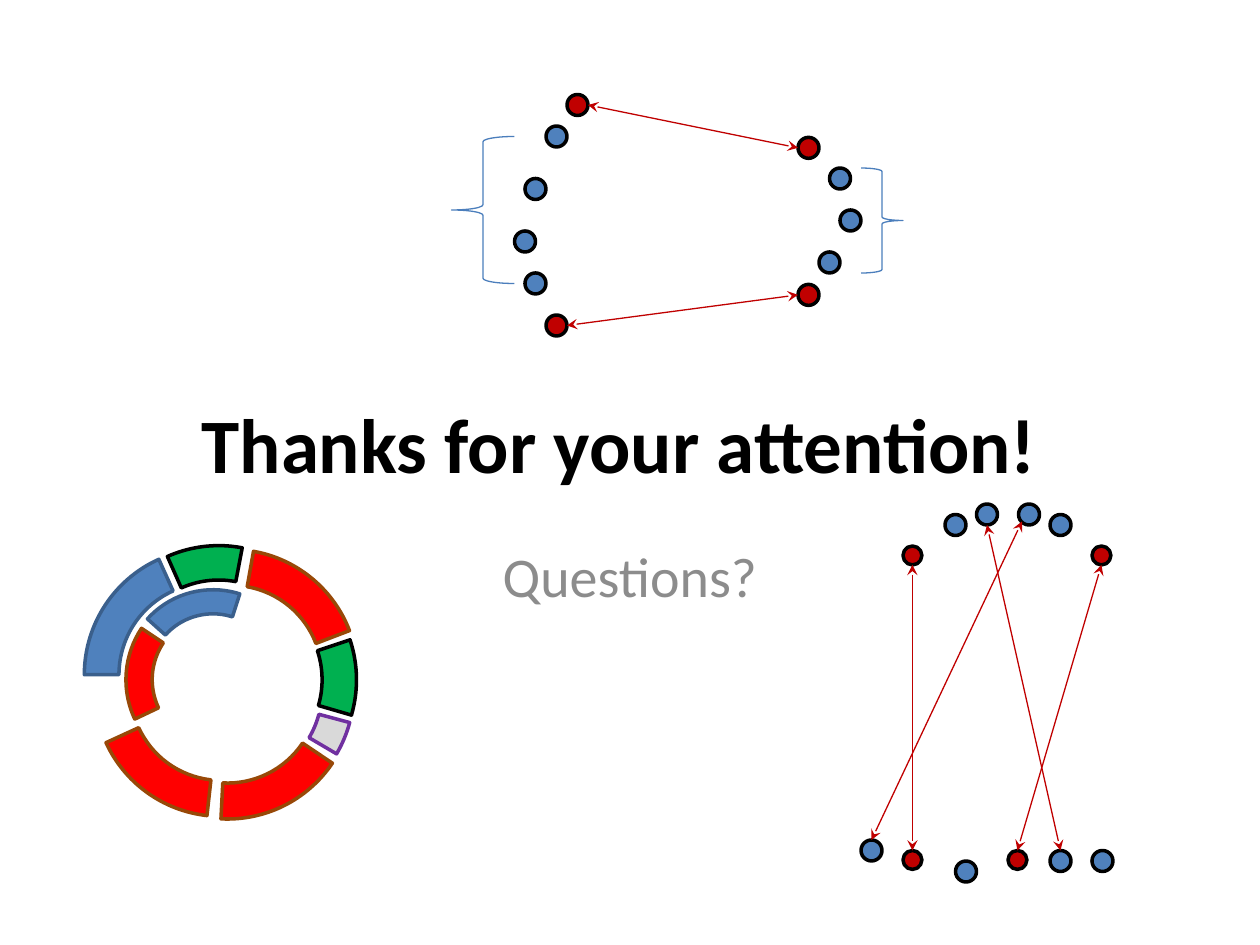
from lxml import etree
from pptx import Presentation
from pptx.dml.color import RGBColor
from pptx.enum.shapes import MSO_CONNECTOR, MSO_SHAPE
from pptx.enum.text import MSO_ANCHOR, PP_ALIGN
from pptx.oxml.ns import qn
from pptx.util import Pt

ARC, OVAL = MSO_SHAPE.BLOCK_ARC, MSO_SHAPE.OVAL
LEFT, RIGHT = MSO_SHAPE.LEFT_BRACE, MSO_SHAPE.RIGHT_BRACE
LINE = MSO_CONNECTOR.STRAIGHT
CENTER, MIDDLE, TOP = PP_ALIGN.CENTER, MSO_ANCHOR.MIDDLE, MSO_ANCHOR.TOP
BLACK, BLUE, CRIMSON = "000000", "4F81BD", "C00000"
NAVY, GREEN, RED, BROWN = "3A5F8C", "00B050", "FF0000", "984807"
GRAY, PURPLE, STEEL = "D9D9D9", "7030A0", "4B7EBC"


def rgb(text):
    """Turn a hex string into a colour."""
    return RGBColor.from_string(text)


class Deck:
    """Hold the style and the current slide."""

    font, thick, thin = "Calibri", 2, 0.75

    def __init__(self, wide, high):
        """Start a deck with one title slide."""
        self.file = Presentation()
        self.file.slide_width, self.file.slide_height = Pt(wide), Pt(high)
        self.slide = self.file.slides.add_slide(self.file.slide_layouts[0])
        self.shapes = self.slide.shapes

    def group(self):
        """Send the next shapes to a new group."""
        self.shapes = self.slide.shapes.add_group_shape().shapes

    def ungroup(self):
        """Send the next shapes to the slide itself."""
        self.shapes = self.slide.shapes

    def text(self, index, box, words, size, color, bold, anchor):
        """Fill and place a placeholder."""
        holder = self.slide.placeholders[index]
        holder.left, holder.top, holder.width, holder.height = map(Pt, box)
        frame = holder.text_frame
        frame.text = words
        frame.vertical_anchor = anchor
        para = frame.paragraphs[0]
        para.alignment = CENTER
        font = para.runs[0].font
        font.name, font.size, font.bold = self.font, Pt(size), bold
        font.color.rgb = rgb(color)

    def shape(self, kind, box, fill, edge, width):
        """Draw a preset shape, hollow if it has no fill."""
        shape = self.shapes.add_shape(kind, *map(Pt, box))
        shape.shadow.inherit = False
        if fill:
            shape.fill.solid()
            shape.fill.fore_color.rgb = rgb(fill)
        else:
            shape.fill.background()
        shape.line.color.rgb = rgb(edge)
        shape.line.width = Pt(width)
        return shape

    def arc(self, left, top, size, turn, sweep, depth, fill, edge):
        """Draw a ring segment that sweeps some degrees from the left."""
        arc = self.shape(ARC, (left, top, size, size), fill, edge, self.thick)
        arc.rotation = turn
        for i, value in enumerate((108, 108 + sweep * 0.6, depth)):
            arc.adjustments[i] = value

    def dots(self, size, fill, spots):
        """Draw round dots at the given corners."""
        for left, top in spots:
            self.shape(OVAL, (left, top, size, size), fill, BLACK, self.thick)

    def arrow(self, *ends):
        """Draw a thin line with a head at both ends."""
        line = self.shapes.add_connector(LINE, *map(Pt, ends))
        line.line.color.rgb = rgb(CRIMSON)
        line.line.width = Pt(self.thin)
        form = line._element.spPr
        stroke = form.find(qn("a:ln"))
        for end in ("a:headEnd", "a:tailEnd"):
            etree.SubElement(stroke, qn(end), type="stealth")
        etree.SubElement(form, qn("a:effectLst"))

    def brace(self, kind, *box):
        """Draw a thin hollow brace."""
        brace = self.shape(kind, box, None, STEEL, self.thin)
        brace.adjustments[0], brace.adjustments[1] = 0.0833, 0.5


def main():
    """Build the closing slide."""
    deck = Deck(720, 540)
    deck.text(0, (48, 156, 612, 194), "Thanks for your attention!",
              44, BLACK, True, MIDDLE)
    deck.text(1, (108, 306, 504, 138), "Questions?", 32, "8C8C8C", False, TOP)

    deck.group()
    big = 144.7
    blue, green = (65.7, 0.137, BLUE, NAVY), (34.6, 0.136, GREEN, BLACK)
    red, gray = (58.9, 0.142, RED, BROWN), (15.4, 0.126, GRAY, PURPLE)
    for left, top, size, turn, look in (
        (48.2, 313.2, big, 0, blue),
        (52.6, 311.8, big, 66.1, green),
        (59.8, 313.9, big, 100.1, red),
        (59, 316.1, big, 161.6, green),
        (57.6, 321.8, big, 195, gray),
        (57.6, 323.3, big, 214, red),
        (54, 321.8, big, 276.4, red),
        (72, 335.5, 105.8, 334.8, red),
        (71.3, 337, 100.8, 42, blue),
    ):
        deck.arc(left, top, size, turn, *look)

    deck.group()
    deck.dots(10.8, CRIMSON, ((516, 312), (516, 486), (576, 486), (624, 312)))
    deck.arrow(521.4, 322.8, 521.4, 486)
    deck.arrow(629.4, 322.8, 581.4, 486)
    deck.dots(12, BLUE, ((546, 492), (540, 294), (582, 288), (600, 294),
                         (558, 288), (600, 486), (624, 486), (492, 480)))
    deck.arrow(564, 300, 606, 486)
    deck.arrow(584, 298, 498, 480)

    deck.ungroup()
    deck.dots(12, CRIMSON, ((456, 78.5), (456, 162.5), (324, 54), (312, 180)))
    deck.dots(12, BLUE, ((474, 96), (480, 120), (468, 144), (312, 72),
                         (300, 102), (300, 156), (294, 132)))
    deck.arrow(336, 60, 456, 84.5)
    deck.arrow(324, 186, 456, 168.5)
    deck.brace(LEFT, 258, 78, 36, 84)
    deck.brace(RIGHT, 492, 96, 24, 60)
    deck.file.save("out.pptx")


if __name__ == "__main__":
    main()
